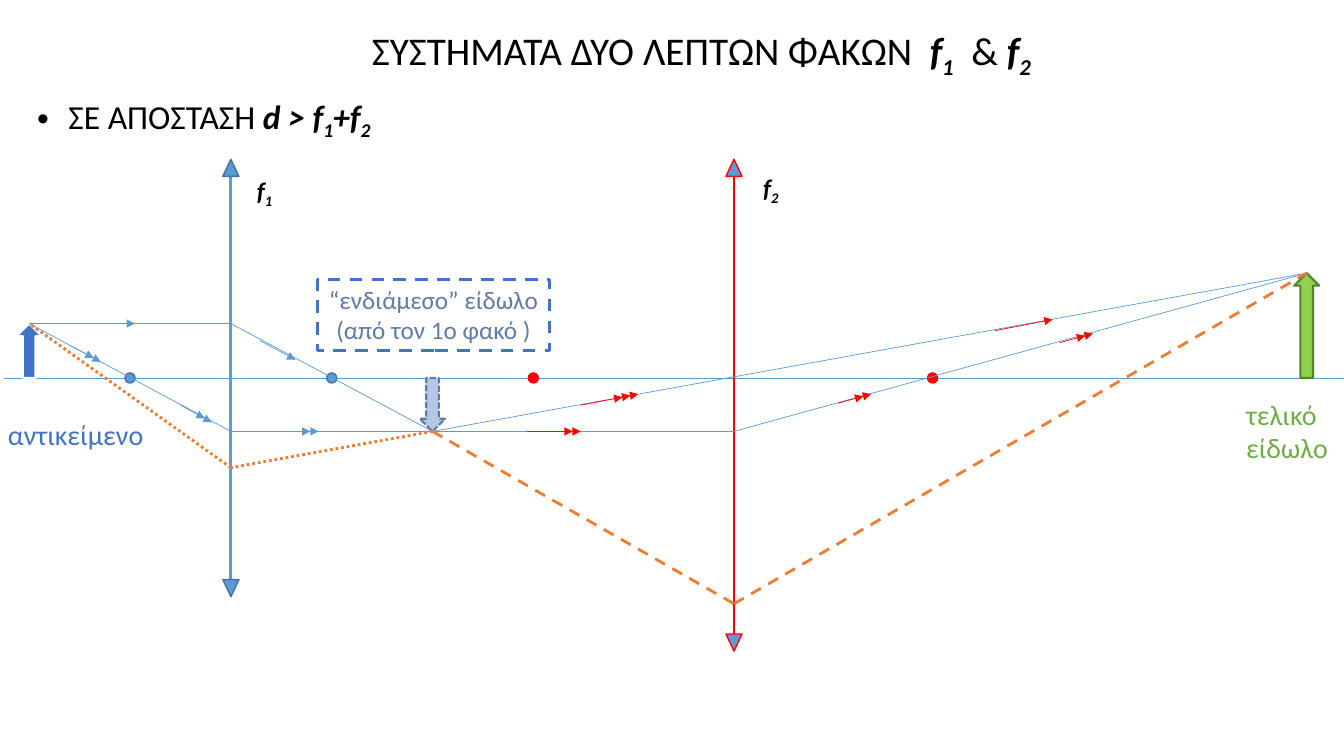
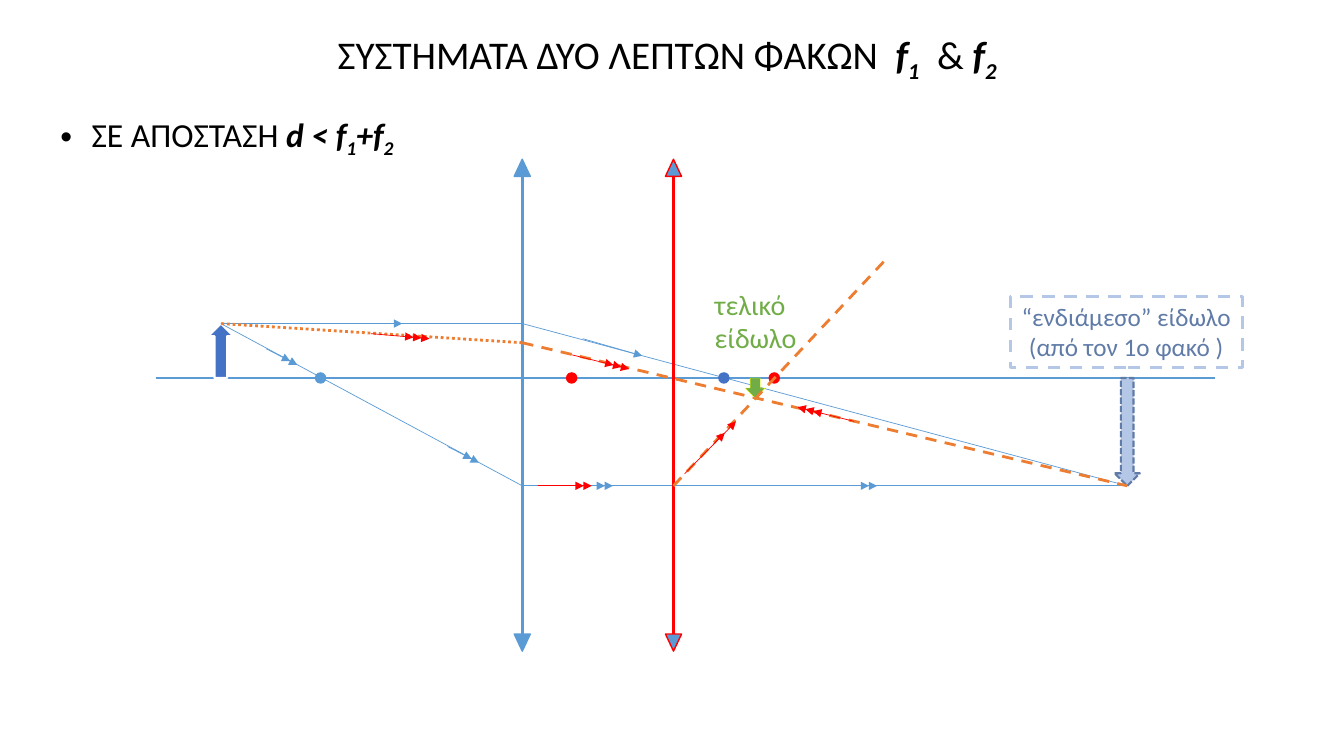
from dataclasses import dataclass
from itertools import pairwise
from math import hypot
from typing import Any

from lxml import etree
from pptx import Presentation
from pptx.dml.color import RGBColor
from pptx.enum.dml import MSO_LINE
from pptx.enum.shapes import MSO_CONNECTOR, MSO_SHAPE
from pptx.enum.text import MSO_ANCHOR, MSO_AUTO_SIZE, PP_ALIGN
from pptx.oxml.ns import qn
from pptx.util import Inches, Pt

STRAIGHT = MSO_CONNECTOR.STRAIGHT
TRIANGLE, DOT, BOX = MSO_SHAPE.ISOSCELES_TRIANGLE, MSO_SHAPE.OVAL, MSO_SHAPE.RECTANGLE
UP, DOWN = MSO_SHAPE.UP_ARROW, MSO_SHAPE.DOWN_ARROW
DASH, DOTTED, SHORT_DASH = MSO_LINE.DASH, MSO_LINE.ROUND_DOT, MSO_LINE.SQUARE_DOT
LEFT, CENTER = PP_ALIGN.LEFT, PP_ALIGN.CENTER
TOP, GROW = MSO_ANCHOR.TOP, MSO_AUTO_SIZE.SHAPE_TO_FIT_TEXT

FONT = "Calibri"
BLACK, WHITE, RED, YELLOW = "000000", "FFFFFF", "FF0000", "FFFF00"
LENS_BLUE, LENS_EDGE, OBJECT_BLUE = "5B9BD5", "43739E", "4472C4"
PALE_BLUE, SLATE, ORANGE = "B4C7E7", "607BA7", "ED7D31"
GREEN, LIME, DARK_GREEN = "70AD47", "92D050", "548235"

PLAIN, STRONG, SUB = "plain", "strong", "sub"
F1 = [("f", STRONG), ("1", SUB)]
F2 = [("f", STRONG), ("2", SUB)]
TITLE = [("ΣΥΣΤΗΜΑΤΑ ΔΥΟ ΛΕΠΤΩΝ ΦΑΚΩΝ  ", PLAIN), *F1, ("  & ", PLAIN), *F2]
FINAL_IMAGE = [[("τελικό", PLAIN)], [("είδωλο", PLAIN)]]
MIDDLE_IMAGE = [[("“ενδιάμεσο” είδωλο", PLAIN)], [("(από τον 1ο φακό )", PLAIN)]]


def rgb(code):
    return RGBColor.from_string(code)


def write_text(shape, paragraphs, size=20, color=BLACK, align=LEFT, bullet=False):
    frame = shape.text_frame
    frame.word_wrap = False
    frame.auto_size = GROW
    frame.vertical_anchor = TOP
    for index, pieces in enumerate(paragraphs):
        paragraph = frame.add_paragraph() if index else frame.paragraphs[0]
        paragraph.alignment = align
        if bullet:
            add_bullet(paragraph)
        for words, style in pieces:
            run = paragraph.add_run()
            run.text = words
            run.font.name = FONT
            run.font.size = Pt(size)
            run.font.color.rgb = rgb(color)
            run.font.bold = run.font.italic = style != PLAIN
            if style == SUB:
                run._r.get_or_add_rPr().set("baseline", "-25000")


def add_bullet(paragraph):
    properties = paragraph._p.get_or_add_pPr()
    properties.set("marL", str(Inches(0.31)))
    properties.set("indent", str(-Inches(0.31)))
    etree.SubElement(properties, qn("a:buFont")).set("typeface", "Arial")
    etree.SubElement(properties, qn("a:buChar")).set("char", "•")


def set_line(line, color, width, dash=None):
    line.color.rgb = rgb(color)
    line.width = Pt(width)
    if dash:
        line.dash_style = dash


@dataclass
class Bench:
    shapes: Any
    left: float
    top: float

    def place(self, x, y):
        return Inches(self.left + x), Inches(self.top + y)

    def figure(self, kind, x, y, width, height, fill, edge, weight=1, dash=None):
        shape = self.shapes.add_shape(kind, *self.place(x, y), Inches(width), Inches(height))
        shape.shadow.inherit = False
        if fill:
            shape.fill.solid()
            shape.fill.fore_color.rgb = rgb(fill)
        else:
            shape.fill.background()
        set_line(shape.line, edge, weight, dash)
        return shape

    def label(self, x, y, width, height, paragraphs, **text_format):
        box = self.shapes.add_textbox(*self.place(x, y), Inches(width), Inches(height))
        write_text(box, paragraphs, **text_format)

    def segment(self, start, end, color=LENS_BLUE, width=0.5, dash=None, arrow=False, within=None):
        owner = within or self.shapes
        connector = owner.add_connector(STRAIGHT, *self.place(*start), *self.place(*end))
        set_line(connector.line, color, width, dash)
        properties = connector._element.spPr
        if arrow:
            outline = properties.find(qn("a:ln"))
            etree.SubElement(outline, qn("a:tailEnd")).set("type", "triangle")
        etree.SubElement(properties, qn("a:effectLst"))

    def ray(self, *points, **line_format):
        for start, end in pairwise(points):
            self.segment(start, end, **line_format)

    def direction_mark(self, color, heads, start, end, gap=0.08):
        run, rise = end[0] - start[0], end[1] - start[1]
        length = hypot(run, rise)
        step_x, step_y = gap * run / length, gap * rise / length
        within = self.shapes.add_group_shape().shapes if heads > 1 else None
        for index in range(heads):
            tip = (end[0] - index * step_x, end[1] - index * step_y)
            tail = (tip[0] - step_x, tip[1] - step_y) if index else start
            self.segment(tail, tip, color=color, arrow=True, within=within)

    def lens(self, x, bottom, color, edge):
        top, width, height = -2.17, 0.16, 0.17
        self.segment((x, top + height), (x, bottom - height), color=color, width=2)
        self.figure(TRIANGLE, x - width / 2, top, width, height, LENS_BLUE, edge)
        lower = self.figure(TRIANGLE, x - width / 2, bottom - height, width, height, LENS_BLUE, edge)
        lower.rotation = 180

    def focus(self, x, fill, edge):
        self.figure(DOT, x - 0.05, -0.05, 0.1, 0.1, fill, edge)

    def upright(self, x, tip, fill, edge, weight=1.5, width=0.25, dash=None):
        kind = UP if tip < 0 else DOWN
        self.figure(kind, x - width / 2, min(tip, 0), width, abs(tip), fill, edge, weight, dash)

    def object_arrow(self, tip):
        self.upright(*tip, OBJECT_BLUE, WHITE)

    def middle_image(self, tip):
        self.upright(*tip, PALE_BLUE, SLATE, dash=SHORT_DASH)

    def middle_caption(self, x, y, edge):
        caption = self.figure(BOX, x, y, 2.3, 0.71, None, edge, 2.25, DASH)
        write_text(caption, MIDDLE_IMAGE, size=18, color=SLATE, align=CENTER)

    def final_caption(self, x, y):
        self.label(x, y, 1.02, 0.77, FINAL_IMAGE, color=GREEN)


def header(slide, left, top, title_offset, relation, relation_offset):
    region = Bench(slide.shapes, left, top)
    region.label(*title_offset, 6.86, 0.57, [TITLE], size=28)
    condition = [("ΣΕ ΑΠΟΣΤΑΣΗ ", PLAIN), (f"d {relation} f", STRONG), ("1", SUB),
                 ("+f", STRONG), ("2", SUB)]
    region.label(*relation_offset, 3.64, 0.5, [condition], size=24, bullet=True)


def distant_lenses(slide, left, axis):
    bench = Bench(slide.shapes, left, axis)
    second = 4.99
    tip, middle, final = (-2, -0.54), (2, 0.53), (10.67, -1.04)
    bench.lens(0, 2.17, LENS_BLUE, LENS_EDGE)
    bench.segment((-2.25, 0), (11.04, 0))
    for x in (-1, 1):
        bench.focus(x, LENS_BLUE, LENS_EDGE)
    bench.object_arrow(tip)
    bench.ray(tip, (0, tip[1]), middle)
    bench.ray(tip, (0, middle[1]), middle)
    bench.middle_image(middle)
    bench.lens(second, 2.71, RED, RED)
    for x in (3, 6.96):
        bench.focus(x, RED, RED)
    bench.ray(middle, (second, middle[1]), final)
    bench.ray(middle, final)
    bench.upright(*final, LIME, DARK_GREEN)
    bench.ray(middle, (second, 2.24), final, color=ORANGE, width=2, dash=DASH)
    bench.ray(middle, (0, 0.89), tip, color=ORANGE, width=2, dash=DOTTED)
    for mark in (
        (LENS_BLUE, 1, (-1.36, -0.54), (-0.95, -0.54)),
        (LENS_BLUE, 1, (0.29, -0.37), (0.64, -0.18)),
        (LENS_BLUE, 2, (-1.59, -0.32), (-1.29, -0.16)),
        (LENS_BLUE, 2, (-0.5, 0.27), (-0.19, 0.44)),
        (LENS_BLUE, 2, (0.53, 0.53), (0.87, 0.53)),
        (RED, 2, (2.94, 0.53), (3.47, 0.53)),
        (RED, 1, (7.58, -0.47), (8.15, -0.58)),
        (RED, 2, (6.02, 0.25), (6.35, 0.16)),
        (RED, 2, (8.22, -0.35), (8.55, -0.44)),
        (RED, 3, (3.47, 0.27), (4.04, 0.16)),
    ):
        bench.direction_mark(*mark)
    bench.label(-2.31, 0.34, 1.56, 0.44, [[("αντικείμενο", PLAIN)]], color=OBJECT_BLUE)
    bench.final_caption(9.97, 0.14)
    bench.middle_caption(0.86, -0.98, OBJECT_BLUE)
    bench.label(0.16, -2.06, 0.37, 0.4, [F1], size=18)
    bench.label(5.18, -2.09, 0.37, 0.4, [F2], size=18)


def close_lenses(slide, left, axis):
    bench = Bench(slide.shapes, left, axis)
    second = 1.5
    tip, middle, bend = (-2.99, -0.54), (6, 1.07), (0, -0.35)
    bench.lens(0, 2.71, LENS_BLUE, LENS_BLUE)
    bench.segment((-3.63, 0), (6.87, 0), width=1)
    for x in (0.49, 2.5):
        bench.focus(x, RED, RED)
    bench.object_arrow(tip)
    bench.ray(tip, (0, tip[1]), middle)
    bench.ray(tip, (0, middle[1]), middle)
    bench.middle_image(middle)
    bench.lens(second, 2.71, RED, RED)
    bench.focus(-2, LENS_BLUE, LENS_BLUE)
    bench.ray(bend, middle, color=ORANGE, width=2, dash=DASH)
    bench.ray(bend, tip, color=ORANGE, width=2, dash=DOTTED)
    bench.focus(2, OBJECT_BLUE, OBJECT_BLUE)
    bench.upright(2.31, 0.2, GREEN, YELLOW, weight=0.25, width=0.2)
    bench.ray((second, middle[1]), (3.6, -1.17), color=ORANGE, width=2, dash=DASH)
    bench.middle_caption(4.84, -0.81, PALE_BLUE)
    for mark in (
        (LENS_BLUE, 1, (0.6, -0.39), (1.19, -0.22)),
        (LENS_BLUE, 1, (-1.6, -0.54), (-1.19, -0.54)),
        (LENS_BLUE, 2, (-2.54, -0.29), (-2.23, -0.13)),
        (LENS_BLUE, 2, (-0.74, 0.68), (-0.43, 0.84)),
        (LENS_BLUE, 2, (0.56, 1.07), (0.9, 1.07)),
        (RED, 2, (0.16, 1.07), (0.69, 1.07)),
        (RED, 2, (1.61, 0.95), (2.12, 0.43), 0.16),
        (RED, 3, (0.49, -0.23), (1.06, -0.09)),
        (RED, 3, (3.29, 0.43), (2.73, 0.29)),
        (LENS_BLUE, 2, (3.18, 1.07), (3.52, 1.07)),
        (RED, 3, (-1.5, -0.44), (-0.92, -0.39)),
    ):
        bench.direction_mark(*mark)
    bench.final_caption(1.81, -0.95)


def main():
    deck = Presentation()
    deck.slide_width, deck.slide_height = Inches(13.33), Inches(7.5)
    blank = deck.slide_layouts[6]
    distant = deck.slides.add_slide(blank)
    header(distant, 0.27, 0.21, (3.32, 0), ">", (0, 0.69))
    distant_lenses(distant, 2.29, 3.75)
    close = deck.slides.add_slide(blank)
    header(close, 0.5, 0.25, (2.75, 0), "<", (0, 0.83))
    close_lenses(close, 5.18, 3.75)
    deck.save("out.pptx")


if __name__ == "__main__":
    main()
